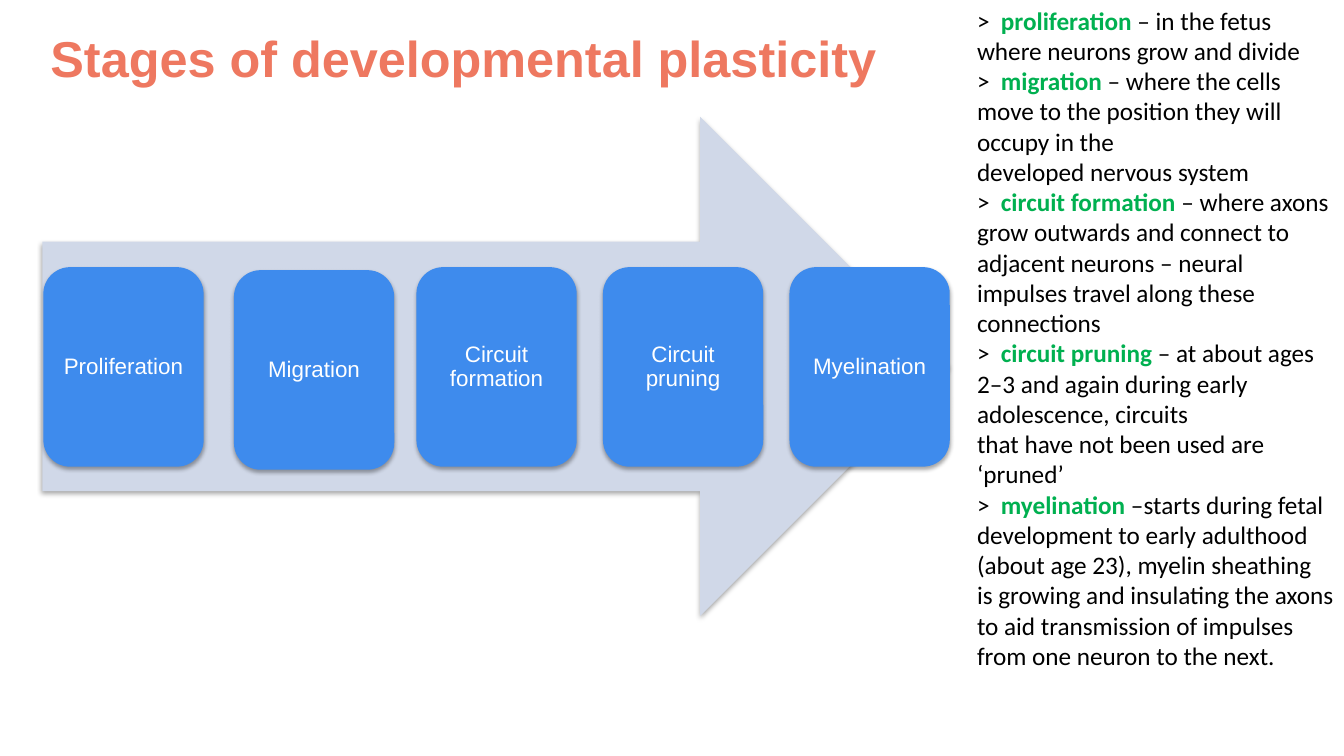
import pptx
import pptx.util
import pptx.dml.color
import pptx.enum.shapes
import pptx.enum.text
import pptx.oxml
import pptx.oxml.ns

Inches, Pt = pptx.util.Inches, pptx.util.Pt
RGBColor = pptx.dml.color.RGBColor
SHAPE = pptx.enum.shapes.MSO_SHAPE
ALIGN = pptx.enum.text.PP_ALIGN
ANCHOR = pptx.enum.text.MSO_ANCHOR
FIT = pptx.enum.text.MSO_AUTO_SIZE

CORAL = RGBColor(0xEE, 0x78, 0x60)
PALE = RGBColor(0xD0, 0xD8, 0xE8)
BLUE = RGBColor(0x3E, 0x8B, 0xED)
GREEN = RGBColor(0x00, 0xB0, 0x50)
BLACK = RGBColor(0, 0, 0)
WHITE = RGBColor(0xFF, 0xFF, 0xFF)

TITLE = "Stages of developmental plasticity"
# Stage label and its (x, y) shift from the even row
STAGES = [
    ("Proliferation", (0, 0)),
    ("Migration", (0.04, 0.03)),
    ("Circuit formation", (0, 0)),
    ("Circuit pruning", (0, 0)),
    ("Myelination", (0, 0)),
]
# Key term (empty on a continuation line) and the text after it
NOTES = [
    ("proliferation", " – in the fetus where neurons grow and divide"),
    ("migration", " – where the cells move to the position they will occupy in the"),
    ("", "developed nervous system"),
    ("circuit formation", " – where axons grow outwards and connect to adjacent "
     "neurons – neural impulses travel along these connections"),
    ("circuit pruning", " – at about ages 2–3 and again during early adolescence, circuits"),
    ("", "that have not been used are ‘pruned’"),
    ("myelination ", "–starts during fetal development to early adulthood "
     "(about age 23), myelin sheathing"),
    ("", "is growing and insulating the axons to aid transmission of impulses "
     "from one neuron to the next."),
]
LEFT, TOP, WIDE, HIGH, PITCH = 0.43, 2.65, 1.59, 1.98, 1.85

SHADOW = (
    '<a:outerShdw %s blurRad="%d" dist="%d" dir="5400000" rotWithShape="0">'
    '<a:srgbClr val="000000"><a:alpha val="35000"/></a:srgbClr></a:outerShdw>'
    % (pptx.oxml.ns.nsdecls("a"), Pt(3.1), Pt(1.8))
)


def place(shape, x, y, w, h):
    shape.left, shape.top = Inches(x), Inches(y)
    shape.width, shape.height = Inches(w), Inches(h)


def style(font, name, size, color, bold=False):
    font.name, font.size, font.bold = name, Pt(size), bold
    font.color.rgb = color


def add_block(slide, kind, box, color):
    """Add a filled shape without an outline, with a soft shadow below."""
    shape = slide.shapes.add_shape(kind, *map(Inches, box))
    shape.fill.solid()
    shape.fill.fore_color.rgb = color
    shape.line.fill.background()
    shape.shadow.inherit = False
    effects = shape._element.spPr.find(pptx.oxml.ns.qn("a:effectLst"))
    effects.append(pptx.oxml.parse_xml(SHADOW))
    return shape


def add_stage(slide, label, box):
    shape = add_block(slide, SHAPE.ROUNDED_RECTANGLE, box, BLUE)
    frame = shape.text_frame
    frame.text = label
    frame.word_wrap = True
    frame.vertical_anchor = ANCHOR.MIDDLE
    frame.margin_left = frame.margin_right = Inches(0.07)
    frame.margin_top = frame.margin_bottom = Inches(0.07)
    para = frame.paragraphs[0]
    para.alignment = ALIGN.CENTER
    para.line_spacing = 0.9
    style(para.runs[0].font, "Arial", 16, WHITE)


def fill_title(shape):
    place(shape, 0.4, 0.19, 9.63, 0.75)
    frame = shape.text_frame
    frame.text = TITLE
    frame.auto_size = FIT.NONE
    frame.vertical_anchor = ANCHOR.MIDDLE
    para = frame.paragraphs[0]
    para.alignment = ALIGN.LEFT
    style(para.runs[0].font, "Arial", 36, CORAL, True)


def fill_notes(shape):
    place(shape, 9.59, 0, 3.74, 7.07)
    frame = shape.text_frame
    frame.auto_size = FIT.NONE
    for i, (term, rest) in enumerate(NOTES):
        para = frame.paragraphs[0] if i == 0 else frame.add_paragraph()
        props = para._p.get_or_add_pPr()
        props.set("marL", "0")
        props.set("indent", "0")
        props.append(pptx.oxml.parse_xml("<a:buNone %s/>" % pptx.oxml.ns.nsdecls("a")))
        para.space_before = Pt(0)
        parts = [(rest, BLACK, False)]
        if term:
            parts = [(">  ", BLACK, False), (term, GREEN, True)] + parts
        for text, color, bold in parts:
            run = para.add_run()
            run.text = text
            style(run.font, "Calibri", 18, color, bold)


def main():
    deck = pptx.Presentation()
    deck.slide_width, deck.slide_height = Inches(13.33), Inches(7.5)
    slide = deck.slides.add_slide(deck.slide_layouts[1])
    fill_title(slide.shapes.title)
    fill_notes(slide.placeholders[1])
    add_block(slide, SHAPE.RIGHT_ARROW, (0.42, 1.16, 9, 4.95), PALE)
    for i, (label, (dx, dy)) in enumerate(STAGES):
        add_stage(slide, label, (LEFT + i * PITCH + dx, TOP + dy, WIDE, HIGH))
    deck.save("out.pptx")


if __name__ == "__main__":
    main()
